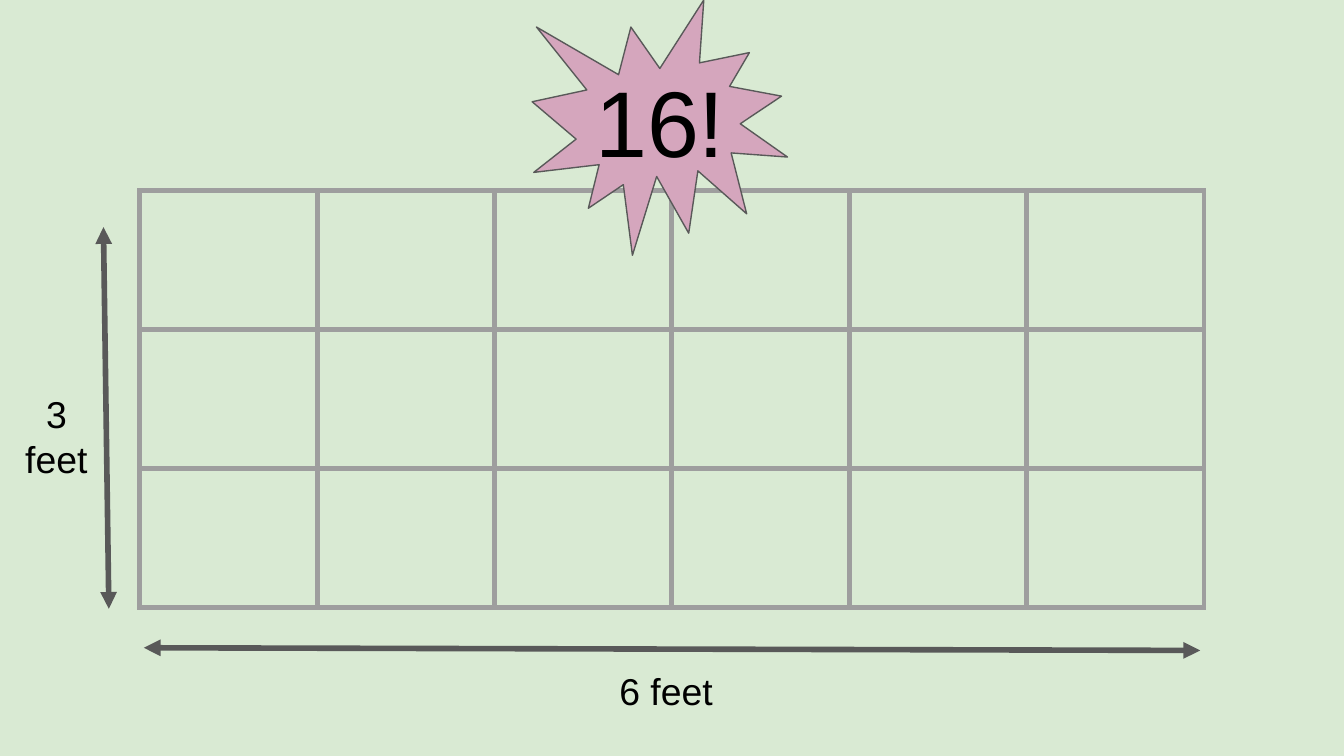
from dataclasses import dataclass

from lxml import etree
from pptx import Presentation
from pptx.dml.color import RGBColor
from pptx.enum import shapes, text
from pptx.oxml.ns import qn
from pptx.util import Inches, Pt

COLORS = {
    "background": "D9EAD3",
    "grid": "9E9E9E",
    "arrow": "595959",
    "burst": "D5A6BD",
    "text": "000000",
}
SLIDE_WIDTH = 10
SLIDE_HEIGHT = SLIDE_WIDTH * 9 / 16
ROWS, COLUMNS = 3, 6
GRID_WIDTH, GRID_HEIGHT = 7.92, 3.1


@dataclass
class Arrow:
    start: tuple[float, float]
    end: tuple[float, float]


def rgb(name: str) -> RGBColor:
    return RGBColor.from_string(COLORS[name])


def add_label(slide, words: str, *, left: float, top: float, width: float,
              height: float, size: int = 20, align=text.PP_ALIGN.LEFT) -> None:
    frame = slide.shapes.add_textbox(
        Inches(left), Inches(top), Inches(width), Inches(height)).text_frame
    frame.word_wrap = True
    frame.margin_left = frame.margin_right = Inches(0.1)
    frame.margin_top = frame.margin_bottom = Inches(0.1)
    paragraph = frame.paragraphs[0]
    paragraph.alignment = align
    run = paragraph.add_run()
    run.text = words
    run.font.name = "Arial"
    run.font.size = Pt(size)
    run.font.color.rgb = rgb("text")


def draw_arrow(slide, arrow: Arrow) -> None:
    connector = slide.shapes.add_connector(
        shapes.MSO_CONNECTOR.STRAIGHT,
        *(Inches(value) for value in arrow.start + arrow.end))
    connector.line.color.rgb = rgb("arrow")
    connector.line.width = Pt(3)
    outline = connector._element.spPr.find(qn("a:ln"))
    for end in ("a:headEnd", "a:tailEnd"):
        etree.SubElement(outline, qn(end), type="triangle")
    etree.SubElement(connector._element.spPr, qn("a:effectLst"))


def border_cell(cell) -> None:
    properties = cell._tc.get_or_add_tcPr()
    for position, side in enumerate(("a:lnL", "a:lnR", "a:lnT", "a:lnB")):
        border = etree.Element(qn(side), w=str(Pt(3)))
        fill = etree.SubElement(border, qn("a:solidFill"))
        etree.SubElement(fill, qn("a:srgbClr"), val=COLORS["grid"])
        properties.insert(position, border)


def draw_grid(slide, left: float, top: float) -> None:
    grid = slide.shapes.add_table(
        ROWS, COLUMNS, Inches(left), Inches(top),
        Inches(GRID_WIDTH), Inches(GRID_HEIGHT)).table
    grid.first_row = grid.horz_banding = False
    for cell in grid.iter_cells():
        cell.fill.background()
        border_cell(cell)


def draw_burst(slide, left: float, top: float, size: float) -> None:
    burst = slide.shapes.add_shape(
        shapes.MSO_SHAPE.EXPLOSION1,
        Inches(left), Inches(top), Inches(size), Inches(size))
    burst.shadow.inherit = False
    burst.fill.solid()
    burst.fill.fore_color.rgb = rgb("burst")
    burst.line.color.rgb = rgb("arrow")
    burst.line.width = Pt(0.75)


def main() -> None:
    deck = Presentation()
    deck.slide_width, deck.slide_height = Inches(SLIDE_WIDTH), Inches(SLIDE_HEIGHT)
    slide = deck.slides.add_slide(deck.slide_layouts[6])
    slide.background.fill.solid()
    slide.background.fill.fore_color.rgb = rgb("background")

    # Dimensions of the rectangle
    add_label(slide, "3 feet", left=0.03, top=2.81, width=0.78, height=0.75,
              align=text.PP_ALIGN.CENTER)
    for arrow in (Arrow((0.77, 1.69), (0.81, 4.53)),
                  Arrow((1.07, 4.82), (8.93, 4.84))):
        draw_arrow(slide, arrow)
    add_label(slide, "6 feet", left=4.51, top=4.87, width=0.97, height=0.42)

    # Square-foot grid
    draw_grid(slide, left=1.04, top=1.42)

    # Answer burst
    draw_burst(slide, left=3.96, top=0, size=1.9)
    add_label(slide, "16!", left=4.33, top=0.38, width=1.35, height=0.75, size=50)

    deck.save("out.pptx")


if __name__ == "__main__":
    main()
